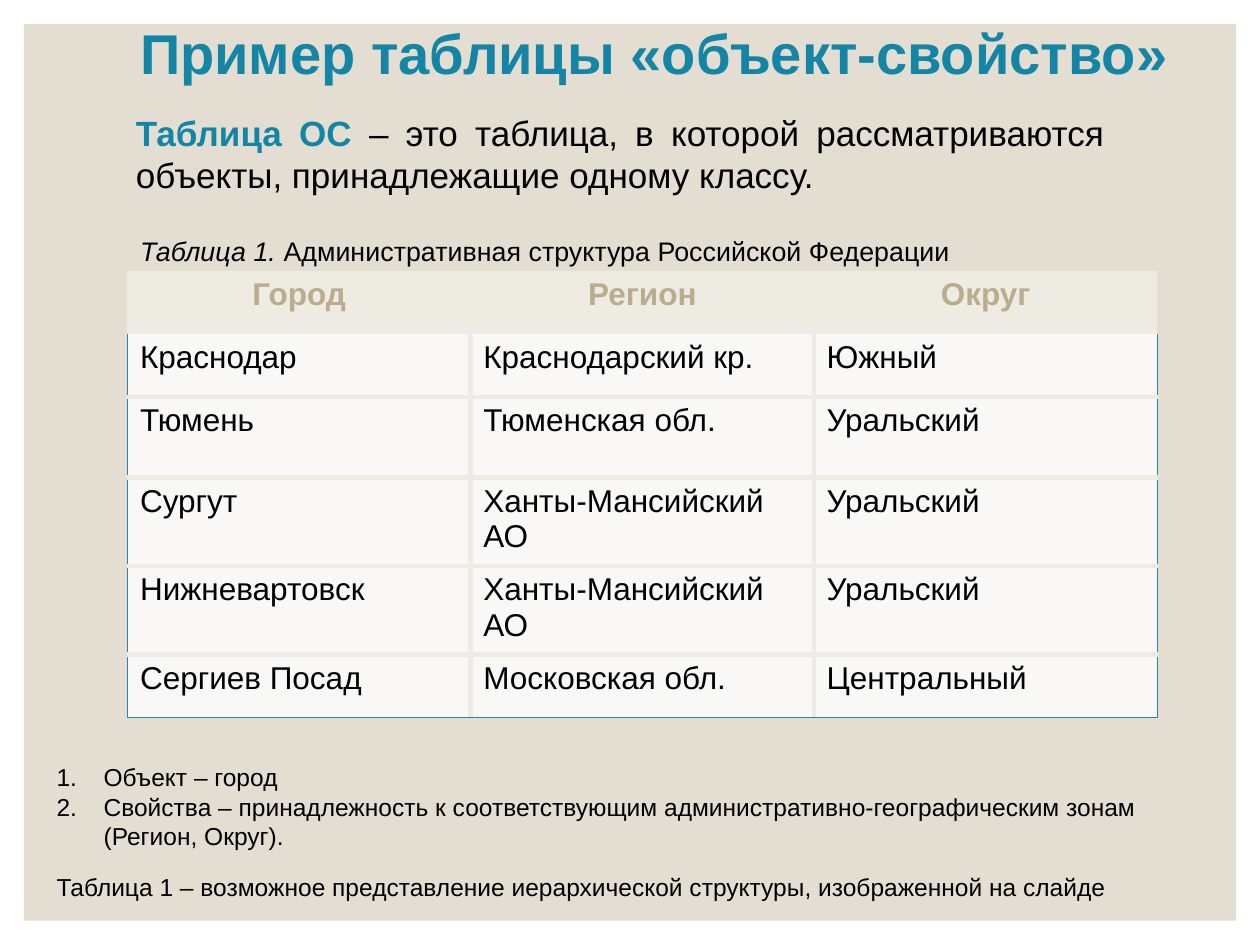
from lxml.etree import SubElement
from pptx import Presentation
from pptx.dml.color import RGBColor
from pptx.enum.shapes import MSO_SHAPE as SHAPE
from pptx.enum.text import MSO_ANCHOR as ANCHOR, MSO_AUTO_SIZE as AUTO_SIZE, PP_ALIGN as ALIGN
from pptx.oxml.ns import qn
from pptx.util import Cm, Pt

FONT = "Arial"
COLORS = {
    "panel": "E3DED1",
    "accent": "1485A4",
    "text": "000000",
    "header_text": "BAAD8D",
    "header_fill": "EEEBE3",
    "cell_fill": "F9F8F6",
    "grid": "EEEBE3",
    "frame": "2683C6",
}
NO_STYLE = "{2D5ABB26-0587-4C30-8999-92F81FD0307C}"

ROWS = [
    ("Город", "Регион", "Округ"),
    ("Краснодар", "Краснодарский кр.", "Южный"),
    ("Тюмень", "Тюменская обл.", "Уральский"),
    ("Сургут", "Ханты-Мансийский АО", "Уральский"),
    ("Нижневартовск", "Ханты-Мансийский АО", "Уральский"),
    ("Сергиев Посад", "Московская обл.", "Центральный"),
]
ROW_HEIGHTS = [1.27, 1.27, 1.63, 1.78, 1.78, 1.27]
COL_WIDTH = 6.92

NOTES = [
    "Объект – город",
    "Свойства – принадлежность к соответствующим административно-географическим зонам (Регион, Округ).",
]
CONCLUSION = "Таблица 1 – возможное представление иерархической структуры, изображенной на слайде"


def rgb(name):
    return RGBColor.from_string(COLORS[name])


def format_run(r, size, color="text", bold=False, italic=False):
    font = r.font
    font.name, font.size = FONT, Pt(size)
    font.bold, font.italic = bold, italic
    font.color.rgb = rgb(color)


def add_run(p, text, size, **style):
    r = p.add_run()
    r.text = text
    format_run(r, size, **style)


def place(sp, left, top, width, height):
    sp.left, sp.top, sp.width, sp.height = Cm(left), Cm(top), Cm(width), Cm(height)


def set_bullet(p, tag, indent=0, **attrs):
    """Give the paragraph a bullet element and a hanging indent in cm."""
    pPr = p._p.get_or_add_pPr()
    pPr.set("marL", str(Cm(indent)))
    pPr.set("indent", str(-Cm(indent)))
    SubElement(pPr, qn(tag), **attrs)


def add_panel(slide):
    sp = slide.shapes.add_shape(SHAPE.RECTANGLE, Cm(0.48), Cm(0.48), Cm(24.44), Cm(18.08))
    sp.shadow.inherit = False
    sp.fill.solid()
    sp.fill.fore_color.rgb = rgb("panel")
    sp.line.fill.background()
    slide.shapes._spTree.insert(2, sp._element)  # behind the placeholders


def fill_title(sp):
    place(sp, 1.09, 0.53, 24.2, 1.22)
    tf = sp.text_frame
    tf.auto_size, tf.vertical_anchor = AUTO_SIZE.NONE, ANCHOR.MIDDLE
    tf.text = "Пример таблицы «объект-свойство»"
    p = tf.paragraphs[0]
    p.alignment, p.line_spacing = ALIGN.CENTER, 0.9
    format_run(p.runs[0], 32, "accent", bold=True)


def fill_caption(sp):
    place(sp, 2.57, 4.72, 19.81, 0.81)
    tf = sp.text_frame
    tf.auto_size = AUTO_SIZE.NONE
    p = tf.paragraphs[0]
    set_bullet(p, "a:buNone")
    p.line_spacing, p.space_before = 0.8, Pt(0)
    add_run(p, "Таблица 1. ", 15.3, italic=True)
    add_run(p, "Административная структура Российской Федерации", 15.3)


def add_text_box(slide, *box):
    tf = slide.shapes.add_textbox(*map(Cm, box)).text_frame
    tf.word_wrap = True
    return tf


def add_definition(slide):
    p = add_text_box(slide, 2.49, 2.13, 20.02, 1.96).paragraphs[0]
    p.alignment = ALIGN.JUSTIFY
    add_run(p, "Таблица ОС ", 20, color="accent", bold=True)
    add_run(p, "– это таблица, в которой рассматриваются объекты, принадлежащие одному классу.", 20)


def add_notes_list(slide):
    tf = add_text_box(slide, 0.89, 15.24, 22.81, 3.8)
    tf.text = "\n".join(NOTES + [CONCLUSION])
    *items, conclusion = tf.paragraphs
    for p in items:
        set_bullet(p, "a:buAutoNum", 0.95, type="arabicPeriod")
    conclusion.space_before = Pt(12.5)
    for p in tf.paragraphs:
        format_run(p.runs[0], 14)


def set_border(cell, index, side, color, width):
    ln = cell._tc.get_or_add_tcPr().makeelement(qn(f"a:ln{side}"), w=str(Pt(width)))
    SubElement(SubElement(ln, qn("a:solidFill")), qn("a:srgbClr"), val=COLORS[color])
    cell._tc.tcPr.insert(index, ln)


def format_borders(cell, row, col):
    """Thick light grid inside the table body, thin blue frame around it."""
    outer = {"L": col == 0, "R": col == len(ROWS[0]) - 1, "B": row == len(ROWS) - 1}
    sides = "LRB" if row == 1 else "LRTB"
    for i, side in enumerate(sides):
        set_border(cell, i, side, *(("frame", 0.5) if outer.get(side) else ("grid", 3)))


def add_city_table(slide):
    frame = slide.shapes.add_table(len(ROWS), len(ROWS[0]), Cm(2.57), Cm(5.46),
                                   Cm(COL_WIDTH * len(ROWS[0])), Cm(sum(ROW_HEIGHTS)))
    table = frame.table
    table.horz_banding = False
    table._tbl.tblPr.find(qn("a:tableStyleId")).text = NO_STYLE
    for column in table.columns:
        column.width = Cm(COL_WIDTH)
    for i, (height, texts) in enumerate(zip(ROW_HEIGHTS, ROWS)):
        table.rows[i].height = Cm(height)
        header = i == 0
        for j, text in enumerate(texts):
            cell = table.cell(i, j)
            cell.text = text
            cell.fill.solid()
            cell.fill.fore_color.rgb = rgb("header_fill" if header else "cell_fill")
            p = cell.text_frame.paragraphs[0]
            format_run(p.runs[0], 18, "header_text" if header else "text", bold=header)
            if header:
                p.alignment = ALIGN.CENTER
            else:
                format_borders(cell, i, j)


def main():
    prs = Presentation()
    prs.slide_width, prs.slide_height = Cm(25.4), Cm(19.05)
    slide = prs.slides.add_slide(prs.slide_layouts[1])
    add_panel(slide)
    fill_title(slide.shapes.title)
    fill_caption(slide.placeholders[1])
    add_notes_list(slide)
    add_city_table(slide)
    add_definition(slide)
    prs.save("out.pptx")


if __name__ == "__main__":
    main()
